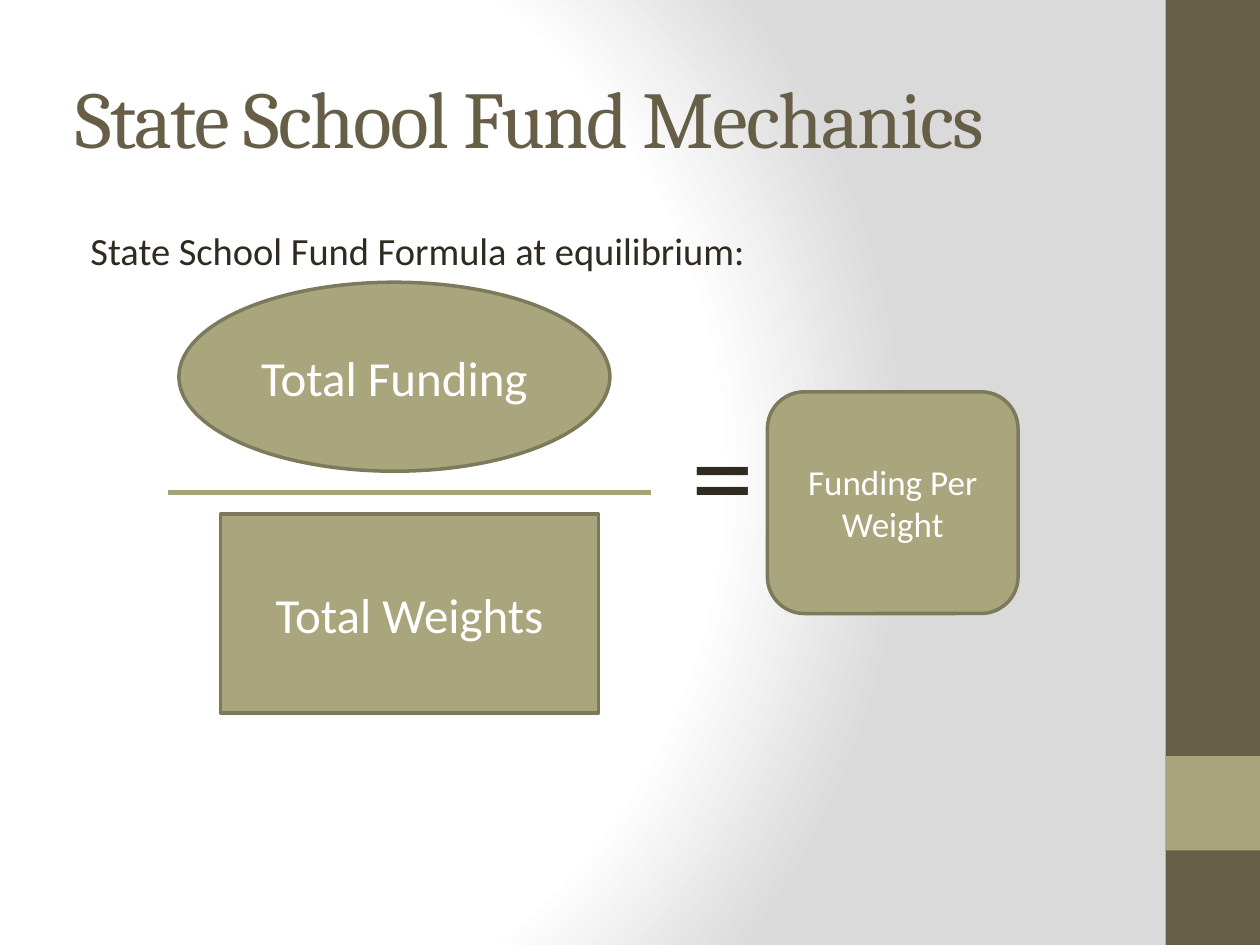
from dataclasses import dataclass

from lxml import etree
from pptx import Presentation
from pptx.dml.color import RGBColor
from pptx.enum import shapes, text
from pptx.oxml import ns, parse_xml
from pptx.util import Inches, Pt


@dataclass(frozen=True)
class Theme:
    brown: str = "675E47"
    olive: str = "A9A57C"
    outline: str = "7D7A5C"
    rule: str = "A6A278"
    ink: str = "2F2B20"
    white: str = "FFFFFF"
    shade: str = "DADADA"
    heading_font: str = "Cambria"
    body_font: str = "Calibri"
    title_size: float = 46
    body_size: float = 22
    term_size: float = 28
    result_size: float = 20
    equals_size: float = 72


THEME = Theme()
SHAPE = shapes.MSO_SHAPE


def lengths(box):
    return [Inches(value) for value in box]


def write(shape, words, size, color, font=THEME.body_font, **frame_format):
    """Put one paragraph in a shape and return the paragraph and its run."""
    frame = shape.text_frame
    for name, value in {"word_wrap": True, **frame_format}.items():
        setattr(frame, name, value)
    paragraph = frame.paragraphs[0]
    run = paragraph.add_run()
    run.text = words
    for name, value in {"size": Pt(size), "name": font}.items():
        setattr(run.font, name, value)
    run.font.color.rgb = RGBColor.from_string(color)
    return paragraph, run


def add_block(slide, kind, box, fill, line=None):
    block = slide.shapes.add_shape(kind, *lengths(box))
    block.shadow.inherit = False
    block.fill.solid()
    block.fill.fore_color.rgb = RGBColor.from_string(fill)
    if line:
        block.line.color.rgb = RGBColor.from_string(line)
        block.line.width = Pt(2)
    else:
        block.line.fill.background()
    return block


def add_term(slide, kind, box, words, size):
    term = add_block(slide, kind, box, THEME.olive, THEME.outline)
    paragraph, _ = write(term, words, size, THEME.white,
                         vertical_anchor=text.MSO_ANCHOR.MIDDLE)
    paragraph.alignment = text.PP_ALIGN.CENTER


def paint_background(slide):
    """Radial gradient, white in the centre and grey at the edge."""
    slide.background.fill.solid()
    properties = slide._element.find(".//" + ns.qn("p:bgPr"))
    stops = "".join(
        f'<a:gs pos="{position * 1000}"><a:srgbClr val="{color}"/></a:gs>'
        for position, color in [(0, THEME.white), (75, THEME.white), (100, THEME.shade)])
    properties.replace(properties[0], parse_xml(
        f'<a:gradFill {ns.nsdecls("a")} rotWithShape="1"><a:gsLst>{stops}</a:gsLst>'
        '<a:path path="circle"><a:fillToRect l="20000" t="50000" r="100000" b="50000"/>'
        '</a:path></a:gradFill>'))


def add_sidebar(slide, box):
    left, top, width, height = box
    add_block(slide, SHAPE.RECTANGLE, box, THEME.brown)
    add_block(slide, SHAPE.RECTANGLE, (left, top + 0.8 * height, width, width), THEME.olive)


def add_title(slide, box):
    title = slide.shapes.add_textbox(*lengths(box))
    _, run = write(title, "State School Fund Mechanics", THEME.title_size, THEME.brown,
                   THEME.heading_font, vertical_anchor=text.MSO_ANCHOR.MIDDLE)
    run.font._element.set("spc", "-100")


def add_intro(slide, box):
    intro = slide.shapes.add_textbox(*lengths(box))
    paragraph, _ = write(intro, "State School Fund Formula at equilibrium:",
                         THEME.body_size, THEME.ink)
    properties = paragraph._p.get_or_add_pPr()
    properties.set("marL", str(Inches(0.12)))
    properties.set("indent", "0")


def add_formula(slide, box):
    left, top, width, height = box

    # Fraction: bar, denominator, numerator
    bar_y = Inches(top + 1.67)
    bar = slide.shapes.add_connector(shapes.MSO_CONNECTOR.STRAIGHT, Inches(left), bar_y,
                                     Inches(left + 3.84), bar_y)
    bar.line.color.rgb = RGBColor.from_string(THEME.rule)
    bar.line.width = Pt(2.5)
    etree.SubElement(bar._element.spPr, ns.qn("a:effectLst"))
    add_term(slide, SHAPE.RECTANGLE, (left + 0.42, top + height - 1.58, 3, 1.58),
             "Total Weights", THEME.term_size)
    add_term(slide, SHAPE.OVAL, (left + 0.09, top, 3.42, 1.5),
             "Total Funding", THEME.term_size)

    # Equals sign and result
    equals = slide.shapes.add_textbox(*lengths((left + 4.06, top + 0.85, 0.71, 1.31)))
    write(equals, "=", THEME.equals_size, THEME.ink, word_wrap=False,
          auto_size=text.MSO_AUTO_SIZE.SHAPE_TO_FIT_TEXT)
    add_term(slide, SHAPE.ROUNDED_RECTANGLE, (left + width - 1.99, top + 0.87, 1.99, 1.76),
             "Funding Per Weight", THEME.result_size)


def main():
    deck = Presentation()
    deck.slide_width, deck.slide_height = Inches(10), Inches(7.5)
    slide = deck.slides.add_slide(deck.slide_layouts[6])
    paint_background(slide)
    add_sidebar(slide, (9.25, 0, 0.75, 7.5))
    add_title(slide, (0.5, 0.3, 8.33, 1.25))
    add_intro(slide, (0.5, 1.75, 8.33, 5.25))
    add_formula(slide, (1.33, 2.24, 6.75, 3.42))
    deck.save("out.pptx")


if __name__ == "__main__":
    main()
